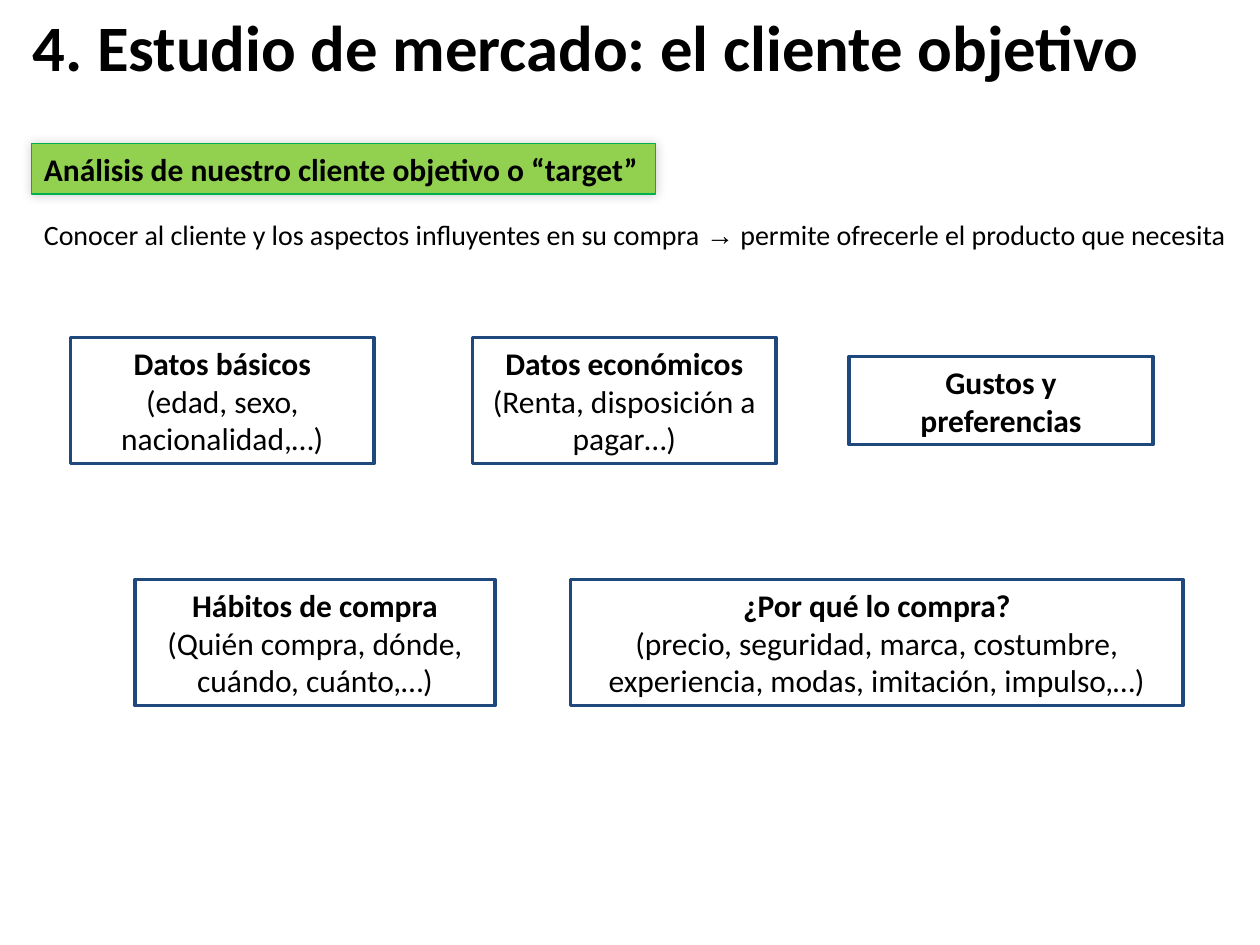
from lxml import etree
from pptx import Presentation
from pptx.dml.color import RGBColor
from pptx.enum import shapes, text
from pptx.oxml.ns import qn
from pptx.util import Inches, Pt

FONT = "Calibri"
BLACK, NAVY, LIME, GREEN = "000000", "1F497D", "92D050", "00B050"

# Each row: top, height, then cards as (left, width, heading, detail)
CARD_ROWS = [
    (2.68, 1, [
        (0.56, 2.41, "Datos básicos", "(edad, sexo, nacionalidad,…)"),
        (3.75, 2.41, "Datos económicos", "(Renta, disposición a pagar…)"),
        (6.74, 2.41, "Gustos y preferencias", None),
    ]),
    (4.6, 1, [
        (1.07, 2.86, "Hábitos de compra", "(Quién compra, dónde, cuándo, cuánto,…)"),
        (4.53, 4.86, "¿Por qué lo compra?",
         "(precio, seguridad, marca, costumbre, experiencia, modas, imitación, impulso,…)"),
    ]),
]
SHORT_CARD = 0.7


def rgb(value):
    return RGBColor.from_string(value)


def write(paragraph, wording, size, bold=False, font=FONT):
    run = paragraph.add_run()
    run.text = wording
    for name, value in {"name": font, "size": Pt(size), "bold": bold}.items():
        setattr(run.font, name, value)
    run.font.color.rgb = rgb(BLACK)


def set_frame(shape, anchor=text.MSO_ANCHOR.TOP):
    frame = shape.text_frame
    layout = {
        "word_wrap": True,
        "vertical_anchor": anchor,
        "margin_left": Inches(0.1),
        "margin_right": Inches(0.1),
        "margin_top": Inches(0.05),
        "margin_bottom": Inches(0.05),
    }
    for name, value in layout.items():
        setattr(frame, name, value)
    return frame


def add_label(slide, box, anchor=text.MSO_ANCHOR.TOP):
    """Add an unfilled line of text and return its first paragraph."""
    label = slide.shapes.add_textbox(*map(Inches, box))
    return set_frame(label, anchor).paragraphs[0]


def add_panel(slide, box, line, width, fill=None):
    panel = slide.shapes.add_shape(shapes.MSO_SHAPE.RECTANGLE, *map(Inches, box))
    panel.shadow.inherit = False
    if fill:
        panel.fill.solid()
        panel.fill.fore_color.rgb = rgb(fill)
    else:
        panel.fill.background()
    panel.line.color.rgb = rgb(line)
    panel.line.width = Pt(width)
    return panel


def add_soft_shadow(shape, blur, opacity):
    effects = shape.element.spPr.find(qn("a:effectLst"))
    shadow = etree.SubElement(effects, qn("a:outerShdw"),
                              blurRad=str(Pt(blur)), dist="0", dir="0", rotWithShape="0")
    color = etree.SubElement(shadow, qn("a:srgbClr"), val=BLACK)
    etree.SubElement(color, qn("a:alpha"), val=str(opacity * 1000))


def add_title(slide, box):
    heading = add_label(slide, box, text.MSO_ANCHOR.MIDDLE)
    write(heading, "4. Estudio de mercado: el cliente objetivo", 37, True)


def add_banner(slide, box):
    banner = add_panel(slide, box, GREEN, 0, LIME)
    add_soft_shadow(banner, blur=6, opacity=20)
    topic = set_frame(banner).paragraphs[0]
    topic.alignment = text.PP_ALIGN.LEFT
    write(topic, "Análisis de nuestro cliente objetivo o “target”", 18, True)


def add_summary(slide, box):
    summary = add_label(slide, box)
    write(summary, "Conocer al cliente y los aspectos influyentes en su compra ", 16)
    write(summary, "→", 16, font="Arial")
    write(summary, " permite ofrecerle el producto que necesita", 16)


def add_card(slide, box, heading, detail):
    frame = set_frame(add_panel(slide, box, NAVY, 2))
    write(frame.paragraphs[0], heading, 18, True)
    if detail:
        write(frame.add_paragraph(), detail, 18)
    for paragraph in frame.paragraphs:
        paragraph.alignment = text.PP_ALIGN.CENTER


def add_card_row(slide, top, height, cards):
    """Place cards in a row, centring those without detail vertically."""
    for left, width, heading, detail in cards:
        card_height = height if detail else SHORT_CARD
        card_top = top + (height - card_height) / 2
        add_card(slide, (left, card_top, width, card_height), heading, detail)


def main():
    deck = Presentation()
    deck.slide_width, deck.slide_height = Inches(10), Inches(7.5)
    slide = deck.slides.add_slide(deck.slide_layouts[6])
    add_title(slide, (0.16, 0.05, 9.36, 0.63))
    add_banner(slide, (0.25, 1.14, 4.95, 0.4))
    add_summary(slide, (0.25, 1.68, 9.72, 0.36))
    for row in CARD_ROWS:
        add_card_row(slide, *row)
    deck.save("out.pptx")


if __name__ == "__main__":
    main()
